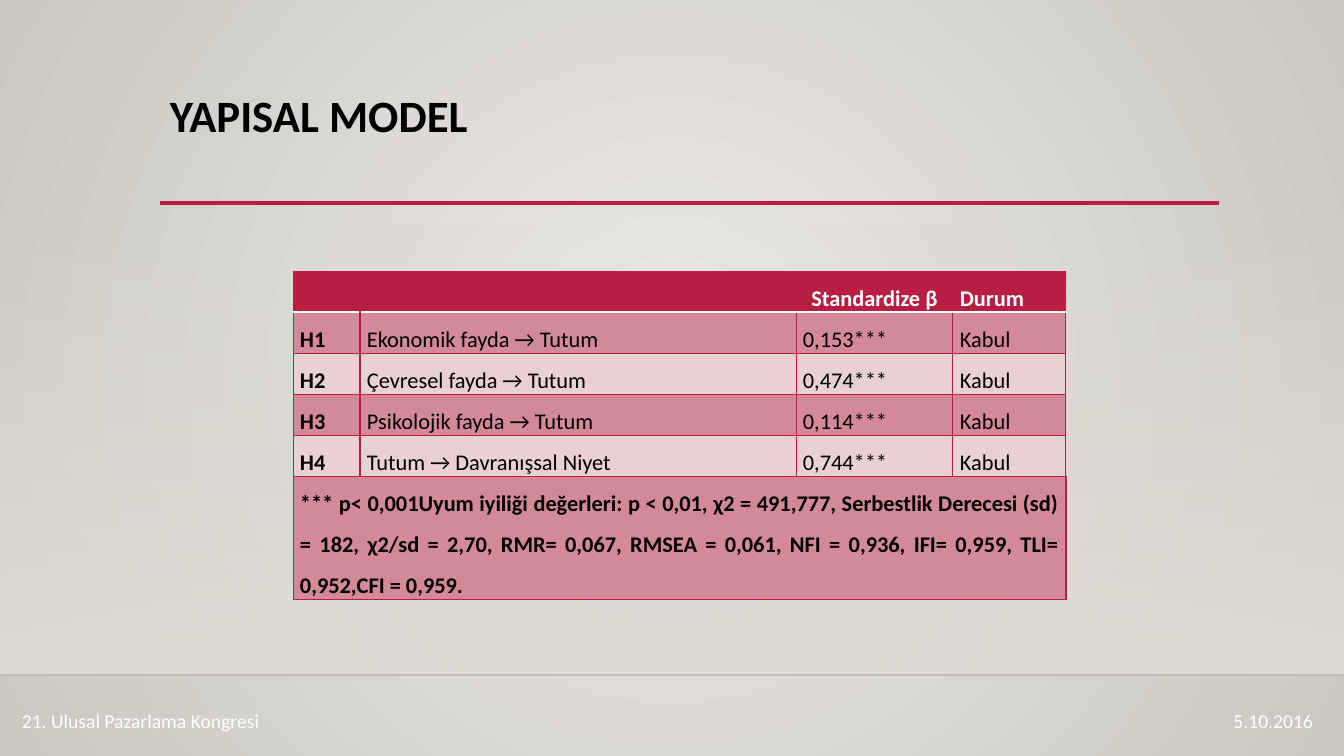
"""Build the structural model slide with its hypothesis table."""
from lxml.etree import SubElement
from pptx import Presentation
from pptx.dml.color import RGBColor
from pptx.enum.shapes import MSO_CONNECTOR, MSO_SHAPE
from pptx.enum.text import MSO_ANCHOR, PP_ALIGN
from pptx.oxml.ns import qn
from pptx.util import Pt

PX = 914400 / 100.8
THEME = {
    "font": "Calibri", "title": 32, "body": 16, "footer": 14,
    "accent": "B71E42", "dark_row": "D48999", "light_row": "E8D0D3",
    "black": "000000", "white": "FFFFFF", "rule": "000001",
    "center": "ECEAE7", "edge": "CAC7C1", "band": "DFDBD5",
}


def px(*lengths):
    return [round(n * PX) for n in lengths]


def write(tf, text, size, color, bold=False, align=PP_ALIGN.LEFT, spacing=1.0):
    p = tf.paragraphs[0]
    p.alignment, p.line_spacing = align, spacing
    r = p.add_run()
    r.text = text
    fmt = {"name": THEME["font"], "size": Pt(THEME[size]), "bold": bold}
    for name, value in fmt.items():
        setattr(r.font, name, value)
    r.font.color.rgb = RGBColor.from_string(THEME[color])


prs = Presentation()
prs.slide_width, prs.slide_height = px(1344, 756)
s = prs.slides.add_slide(prs.slide_layouts[6])

fill = s.background.fill
fill.gradient()
for stop, color in zip(fill.gradient_stops, ("center", "edge")):
    stop.color.rgb = RGBColor.from_string(THEME[color])
grad = next(s.element.iter(qn("a:gradFill")))
grad.remove(grad.find(qn("a:lin")))
circle = SubElement(grad, qn("a:path"), path="circle")
SubElement(circle, qn("a:fillToRect"), l="50000", t="50000", r="50000", b="50000")

band = s.shapes.add_shape(MSO_SHAPE.RECTANGLE, *px(0, 223, 1344, 453))
band.shadow.inherit = False
band.line.fill.background()
band.fill.gradient()
band.fill.gradient_angle = 270
for stop in band.fill.gradient_stops:
    stop.color.rgb = RGBColor.from_string(THEME["band"])
SubElement(next(band.element.iter(qn("a:srgbClr"))), qn("a:alpha"), val="0")

for x1, x2, y, color, width, alpha in (
    (0, 1344, 675, "rule", 1, 20),
    (160, 1219, 203, "accent", 2.5, 100),
):
    line = s.shapes.add_connector(MSO_CONNECTOR.STRAIGHT, *px(x1, y, x2, y))
    line.line.color.rgb = RGBColor.from_string(THEME[color])
    line.line.width = Pt(width)
    SubElement(next(line.element.iter(qn("a:srgbClr"))), qn("a:alpha"), val=str(alpha * 1000))
    SubElement(line.element.spPr, qn("a:effectLst"))

for box, anchor, text, fmt in (
    ((160, 89, 1058, 116), MSO_ANCHOR.TOP, "YAPISAL MODEL",
     {"size": "title", "color": "black", "bold": True, "spacing": 0.9}),
    ((937, 704, 386, 34), MSO_ANCHOR.MIDDLE, "5.10.2016",
     {"size": "footer", "color": "white", "align": PP_ALIGN.RIGHT}),
    ((12, 704, 654, 34), MSO_ANCHOR.MIDDLE, "21. Ulusal Pazarlama Kongresi",
     {"size": "footer", "color": "white"}),
):
    tf = s.shapes.add_textbox(*px(*box)).text_frame
    tf.word_wrap, tf.vertical_anchor = True, anchor
    write(tf, text, **fmt)

ROWS = (
    ("", "", "Standardize β", "Durum"),
    ("H1", "Ekonomik fayda → Tutum", "0,153***", "Kabul"),
    ("H2", "Çevresel fayda → Tutum", "0,474***", "Kabul"),
    ("H3", "Psikolojik fayda → Tutum", "0,114***", "Kabul"),
    ("H4", "Tutum → Davranışsal Niyet", "0,744***", "Kabul"),
    ("*** p< 0,001Uyum iyiliği değerleri: p < 0,01, χ2 = 491,777, "
     "Serbestlik Derecesi (sd) = 182, χ2/sd = 2,70, RMR= 0,067, RMSEA = 0,061, "
     "NFI = 0,936, IFI= 0,959, TLI= 0,952,CFI = 0,959.", "", "", ""),
)
WIDTHS = (67, 436, 157, 113)
HEIGHTS = (41, 41, 41, 41, 41, 123)
table = s.shapes.add_table(
    len(ROWS), len(WIDTHS), *px(293, 271, sum(WIDTHS), sum(HEIGHTS))).table
for column, width in zip(table.columns, px(*WIDTHS)):
    column.width = width
for row, height in zip(table.rows, px(*HEIGHTS)):
    row.height = height
table.cell(5, 0).merge(table.cell(5, 3))

for i, texts in enumerate(ROWS):
    for j, text in enumerate(texts):
        cell = table.cell(i, j)
        cell.margin_left, cell.margin_right, cell.margin_top, cell.margin_bottom = px(7, 7, 0, 0)
        borders = {side: ("accent", 0.75) for side in "LRTB"}
        if i == 0:
            borders["B"] = ("white", 1.25)
        elif i == 1 and j > 0:
            borders["T"] = ("white", 1.25)
        if i > 0 and j == 0:
            borders["R"] = ("accent", 1.25)
        elif 0 < i < 5 and j == 1:
            borders["L"] = ("accent", 1.25)
        tc_pr = cell._tc.get_or_add_tcPr()
        for side, (color, width) in borders.items():
            ln = SubElement(tc_pr, qn(f"a:ln{side}"), w=str(Pt(width)))
            SubElement(SubElement(ln, qn("a:solidFill")), qn("a:srgbClr"), val=THEME[color])
        shade = "accent" if i == 0 else "dark_row" if i % 2 else "light_row"
        cell.fill.solid()
        cell.fill.fore_color.rgb = RGBColor.from_string(THEME[shade])
        if text:
            write(cell.text_frame, text, "body", "black" if i else "white",
                  bold=i == 0 or j == 0, spacing=1.5,
                  align=PP_ALIGN.CENTER if (i, j) == (0, 2) else PP_ALIGN.JUSTIFY)

prs.save("out.pptx")
